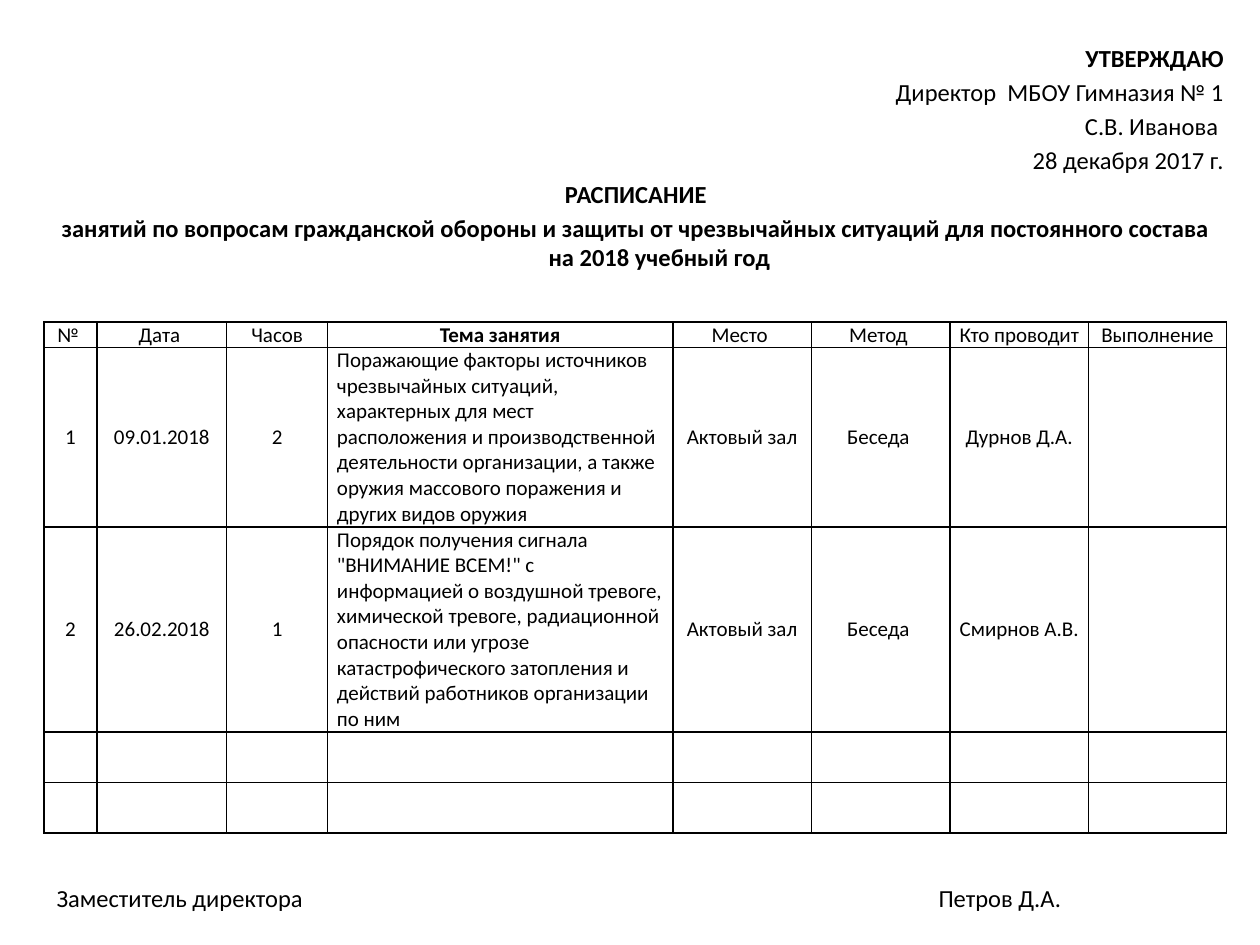
from lxml.etree import SubElement
from pptx import Presentation
from pptx.dml.color import RGBColor
from pptx.enum.text import MSO_ANCHOR, PP_ALIGN
from pptx.oxml.ns import qn
from pptx.util import Pt

BLACK = "000000"
FONT = "Calibri"
COLUMN_WIDTHS = [30.2, 74.2, 57.6, 197.3, 79.2, 79.2, 79.2, 78.8]
ROW_HEIGHTS = [14.4, 102.6, 117.2, 28.8, 28.8]
TOPIC_COLUMN = 3
APPROVAL = [
    "Директор  МБОУ Гимназия № 1",
    "С.В. Иванова ",
    "28 декабря 2017 г.",
]
TITLE = [
    "РАСПИСАНИЕ",
    "занятий по вопросам гражданской обороны и защиты от чрезвычайных ситуаций "
    "для постоянного состава на 2018 учебный год",
]
SCHEDULE = [
    ["№ ", "Дата ", "Часов", "Тема занятия", "Место ", "Метод ",
     "Кто проводит", "Выполнение"],
    ["1", "09.01.2018", "2",
     "Поражающие факторы источников чрезвычайных ситуаций, характерных для мест "
     "расположения и производственной деятельности организации, а также оружия "
     "массового поражения и других видов оружия",
     "Актовый зал", "Беседа ", "Дурнов Д.А.", ""],
    ["2", "26.02.2018", "1",
     "Порядок получения сигнала \"ВНИМАНИЕ ВСЕМ!\" с информацией о воздушной "
     "тревоге, химической тревоге, радиационной опасности или угрозе "
     "катастрофического затопления и действий работников организации по ним",
     "Актовый зал", "Беседа ", "Смирнов А.В.", ""],
]


def color(value):
    return RGBColor.from_string(value)


def write(paragraph, text, size=14, bold=False, align=PP_ALIGN.LEFT,
          before=0, hanging=0, tab=None):
    """Put formatted text into a paragraph; tab is a left tab stop in points."""
    paragraph.alignment = align
    paragraph.space_before = Pt(before)
    properties = paragraph._p.get_or_add_pPr()
    if hanging:
        properties.set("marL", str(Pt(hanging)))
        properties.set("indent", str(Pt(-hanging)))
    if tab:
        tab_list = SubElement(properties, qn("a:tabLst"))
        SubElement(tab_list, qn("a:tab"), pos=str(Pt(tab)), algn="l")
    run = paragraph.add_run()
    run.text = text
    run.font.name = FONT
    run.font.size = Pt(size)
    run.font.bold = bold
    run.font.color.rgb = color(BLACK)


def add_text_frame(slide, left, top, width, height):
    box = slide.shapes.add_textbox(Pt(left), Pt(top), Pt(width), Pt(height))
    box.text_frame.word_wrap = True
    return box.text_frame


def add_heading(slide):
    frame = add_text_frame(slide, 20.2, 20.9, 686.2, 147.6)
    lines = [("УТВЕРЖДАЮ", True, PP_ALIGN.RIGHT)]
    lines += [(text, False, PP_ALIGN.RIGHT) for text in APPROVAL]
    lines += [(text, True, PP_ALIGN.CENTER) for text in TITLE]
    for index, (text, bold, align) in enumerate(lines):
        paragraph = frame.add_paragraph() if index else frame.paragraphs[0]
        write(paragraph, text, bold=bold, align=align,
              before=2.6 if index else 0, hanging=27)


def set_borders(cell, value, width):
    properties = cell._tc.get_or_add_tcPr()
    for side in ("a:lnL", "a:lnR", "a:lnT", "a:lnB"):
        line = SubElement(properties, qn(side), w=str(Pt(width)))
        fill = SubElement(line, qn("a:solidFill"))
        SubElement(fill, qn("a:srgbClr"), val=value)


def fill_cell(cell, text, is_header, is_topic):
    set_borders(cell, BLACK, 1)
    cell.fill.background()
    if not text:
        return
    is_body_topic = is_topic and not is_header
    cell.vertical_anchor = MSO_ANCHOR.MIDDLE
    cell.margin_top = cell.margin_bottom = 0
    cell.margin_left = cell.margin_right = Pt(5.4 if is_body_topic else 3.6)
    write(cell.text_frame.paragraphs[0], text, size=12,
          bold=is_topic and is_header,
          align=PP_ALIGN.LEFT if is_body_topic else PP_ALIGN.CENTER)


def add_schedule(slide):
    table = slide.shapes.add_table(
        len(ROW_HEIGHTS), len(COLUMN_WIDTHS), Pt(25.2), Pt(184.1),
        Pt(sum(COLUMN_WIDTHS)), Pt(sum(ROW_HEIGHTS))).table
    table.first_row = table.horz_banding = False
    for column, width in zip(table.columns, COLUMN_WIDTHS):
        column.width = Pt(width)
    for row_index, height in enumerate(ROW_HEIGHTS):
        table.rows[row_index].height = Pt(height)
        for column_index in range(len(COLUMN_WIDTHS)):
            filled = row_index < len(SCHEDULE)
            text = SCHEDULE[row_index][column_index] if filled else ""
            fill_cell(table.cell(row_index, column_index), text,
                      row_index == 0, column_index == TOPIC_COLUMN)


def add_signature(slide):
    frame = add_text_frame(slide, 25.2, 501.1, 668.9, 24.5)
    write(frame.paragraphs[0], "Заместитель директора\tПетров Д.А.", tab=504)


def main():
    presentation = Presentation()
    presentation.slide_width = Pt(720)
    presentation.slide_height = Pt(540)
    slide = presentation.slides.add_slide(presentation.slide_layouts[6])
    add_heading(slide)
    add_schedule(slide)
    add_signature(slide)
    presentation.save("out.pptx")


if __name__ == "__main__":
    main()
